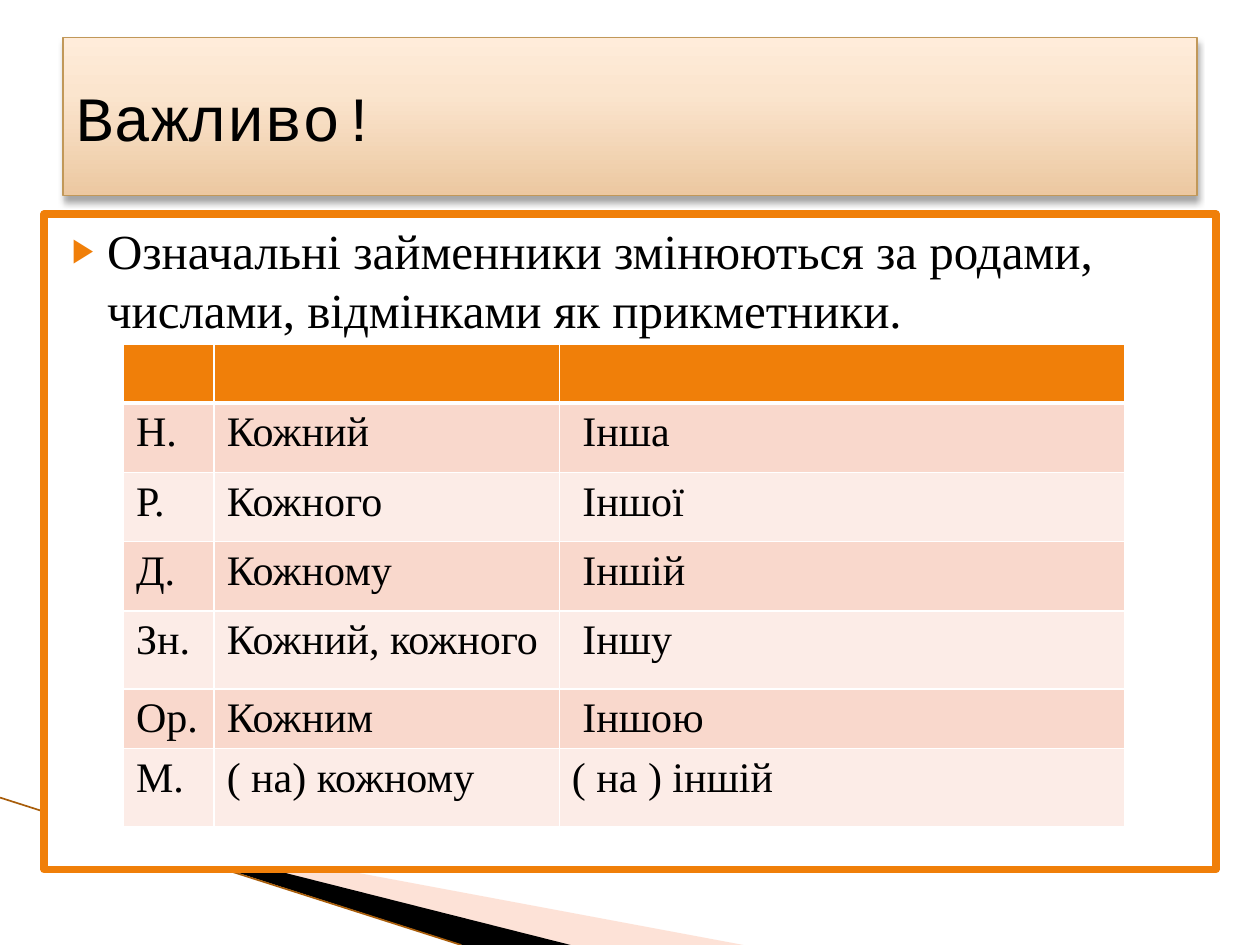
"""Build a slide on the declension of Ukrainian defining pronouns."""
from lxml.etree import SubElement
from pptx import Presentation
from pptx.dml.color import RGBColor
from pptx.enum.text import MSO_ANCHOR, MSO_AUTO_SIZE, PP_ALIGN
from pptx.oxml import parse_xml
from pptx.oxml.ns import nsdecls, qn
from pptx.util import Inches, Pt

BLACK = RGBColor(0x00, 0x00, 0x00)
WHITE = RGBColor(0xFF, 0xFF, 0xFF)
ORANGE = RGBColor(0xF0, 0x7F, 0x09)
PEACH = RGBColor(0xFC, 0xB7, 0x9B)
BROWN = RGBColor(0xA8, 0x5D, 0x0A)
TAN = RGBColor(0xC1, 0x98, 0x59)
BAND_DARK = RGBColor(0xF9, 0xD8, 0xCC)
BAND_LIGHT = RGBColor(0xFC, 0xEC, 0xE7)
TITLE_STOPS = [(0, RGBColor(0xEC, 0xC8, 0xA1)), (65, RGBColor(0xFB, 0xE5, 0xCE)),
               (100, RGBColor(0xFF, 0xEC, 0xDA))]
SERIF = "Times New Roman"


def format_paragraph(paragraph, font_name, size):
    paragraph.alignment = PP_ALIGN.LEFT
    paragraph.font.name = font_name
    paragraph.font.size = Pt(size)
    paragraph.font.color.rgb = BLACK


def add_border(cell, side, width):
    cell._tc.get_or_add_tcPr().append(parse_xml(
        f'<a:{side} {nsdecls("a")} w="{Pt(width)}"><a:solidFill>'
        f'<a:srgbClr val="{WHITE}"/></a:solidFill></a:{side}>'))


presentation = Presentation()
presentation.slide_width = Inches(10)
presentation.slide_height = Inches(7.5)
slide = presentation.slides.add_slide(presentation.slide_layouts[1])
shapes = slide.shapes
title = shapes.title
body = slide.placeholders[1]

wedges = [
    (PEACH, [(0.55, 6.5), (5.9, 7.5), (4.52, 7.5)]),
    (BLACK, [(0.53, 6.49), (4.53, 7.5), (3.67, 7.5)]),
]
for color, points in wedges:
    corners = [(Inches(x), Inches(y)) for x, y in points]
    builder = shapes.build_freeform(*corners[0])
    builder.add_line_segments(corners[1:])
    wedge = builder.convert_to_shape()
    wedge.shadow.inherit = False
    wedge.fill.solid()
    wedge.fill.fore_color.rgb = color
    wedge.line.fill.background()
    if color == PEACH:
        color_element = wedge._element.spPr.find(".//" + qn("a:srgbClr"))
        SubElement(color_element, qn("a:alpha"), val="40000")

edge = shapes.add_connector(1, Inches(0), Inches(6.33), Inches(3.66), Inches(7.5))
edge.line.color.rgb = BROWN
edge.line.width = Pt(0.95)
SubElement(edge._element.spPr, qn("a:effectLst"))

for placeholder in (body, title):
    shapes._spTree.append(placeholder._element)

body.left, body.top = Inches(0.35), Inches(1.7)
body.width, body.height = Inches(9.3), Inches(5.2)
body.fill.solid()
body.fill.fore_color.rgb = WHITE
body.line.color.rgb = ORANGE
body.line.width = Pt(4.33)
body.text_frame.auto_size = MSO_AUTO_SIZE.NONE
body.text_frame.text = "Означальні займенники змінюються за родами, числами, відмінками як прикметники."
paragraph = body.text_frame.paragraphs[0]
properties = paragraph._p.get_or_add_pPr()
properties.set("marL", str(Inches(0.4)))
properties.set("indent", str(Inches(-0.28)))
bullet_color = SubElement(properties, qn("a:buClr"))
SubElement(bullet_color, qn("a:srgbClr"), val=str(ORANGE))
SubElement(properties, qn("a:buSzPct"), val="68000")
SubElement(properties, qn("a:buChar"), char="▶")
paragraph.space_before = Pt(0)
format_paragraph(paragraph, SERIF, 28)

title.left, title.top = Inches(0.5), Inches(0.3)
title.width, title.height = Inches(9), Inches(1.25)
stops = "".join(f'<a:gs pos="{position * 1000}"><a:srgbClr val="{color}"/></a:gs>'
                for position, color in TITLE_STOPS)
title_properties = title._element.spPr
title_properties.append(parse_xml(
    f'<a:gradFill {nsdecls("a")} rotWithShape="1"><a:gsLst>{stops}</a:gsLst>'
    '<a:lin ang="16200000" scaled="0"/></a:gradFill>'))
title.line.color.rgb = TAN
title.line.width = Pt(0.75)
title_properties.append(parse_xml(
    f'<a:effectLst {nsdecls("a")}><a:outerShdw blurRad="{Pt(4)}" dist="{Pt(3)}" '
    f'dir="5400000" rotWithShape="0"><a:srgbClr val="{BLACK}">'
    '<a:alpha val="35000"/></a:srgbClr></a:outerShdw></a:effectLst>'))
title.text_frame.text = "Важливо!"
title.text_frame.auto_size = MSO_AUTO_SIZE.NONE
title.text_frame.vertical_anchor = MSO_ANCHOR.MIDDLE
format_paragraph(title.text_frame.paragraphs[0], "Courier New", 36)

rows = [
    ("", "", ""),
    ("Н.", "Кожний", " Інша"),
    ("Р.", "Кожного", " Іншої"),
    ("Д.", "Кожному", " Іншій"),
    ("Зн.", "Кожний, кожного", " Іншу"),
    ("Ор.", "Кожним", " Іншою"),
    ("М.", "( на) кожному", "( на ) іншій"),
]
column_widths = [0.72, 2.74, 4.49]
row_heights = [0.47, 0.55, 0.55, 0.55, 0.62, 0.47, 0.62]
table = shapes.add_table(len(rows), len(column_widths), Inches(0.98), Inches(2.73),
                         Inches(sum(column_widths)), Inches(sum(row_heights))).table
for column, width in zip(table.columns, column_widths):
    column.width = Inches(width)
for row_index, (texts, height) in enumerate(zip(rows, row_heights)):
    table.rows[row_index].height = Inches(height)
    band = BAND_DARK if row_index % 2 else BAND_LIGHT
    for column_index, text in enumerate(texts):
        cell = table.cell(row_index, column_index)
        cell.text = text
        format_paragraph(cell.text_frame.paragraphs[0], SERIF, 24)
        for side in ("lnL", "lnR", "lnT", "lnB"):
            header_edge = (row_index, side) in ((0, "lnB"), (1, "lnT"))
            add_border(cell, side, 3 if header_edge else 1)
        cell.fill.solid()
        cell.fill.fore_color.rgb = band if row_index else ORANGE

presentation.save("out.pptx")
